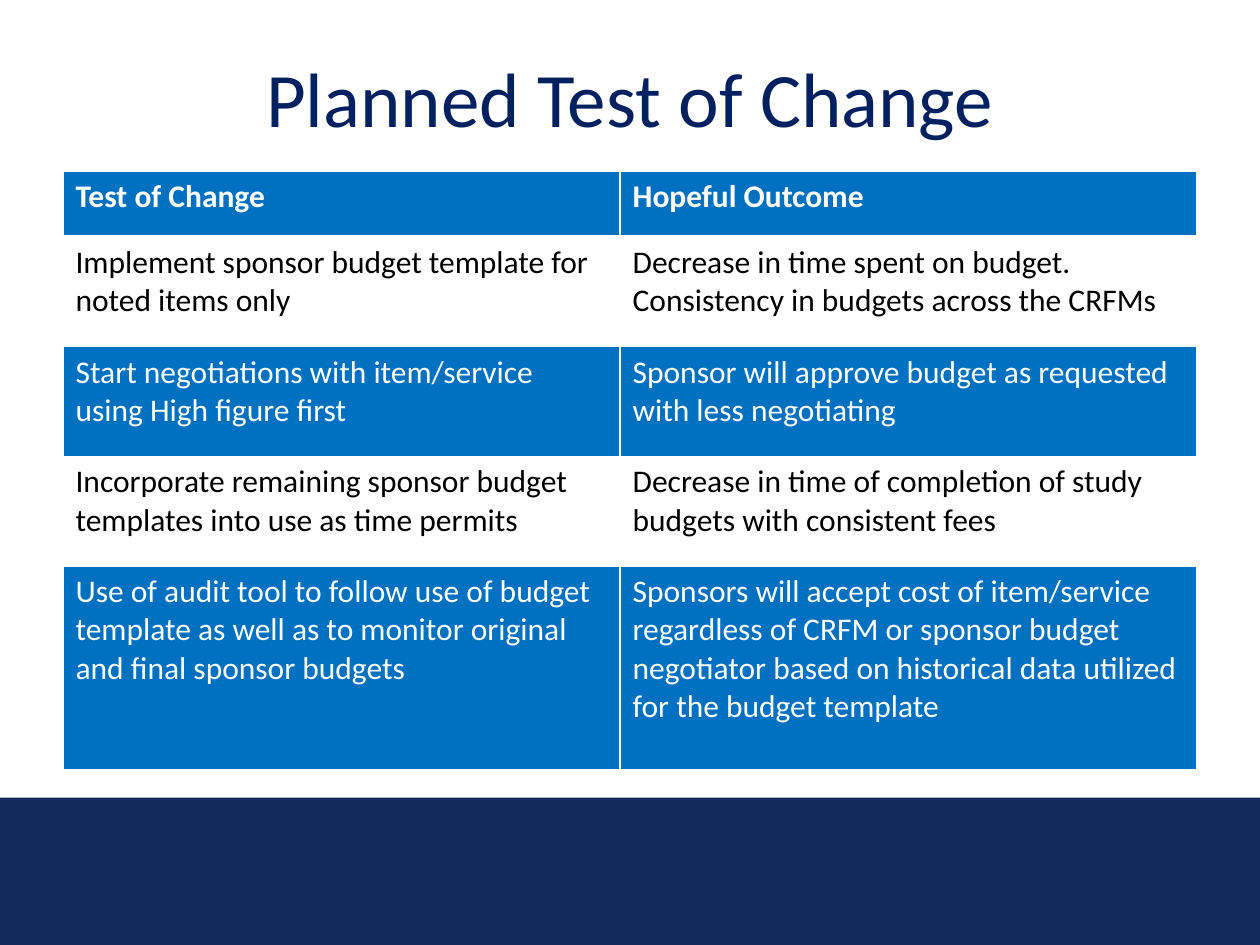
from lxml.etree import SubElement
from pptx import Presentation
from pptx.dml.color import RGBColor
from pptx.enum.shapes import MSO_SHAPE
from pptx.enum.text import MSO_ANCHOR, PP_ALIGN
from pptx.oxml.ns import qn
from pptx.util import Cm, Pt

COLORS = {
    "title": "002060",
    "band": "122A5D",
    "blue": "0070C0",
    "white": "FFFFFF",
    "black": "000000",
}
COLUMN_WIDTHS = [11.23, 11.63]
ROW_HEIGHTS = [1.32, 2.21, 2.21, 2.21, 4.11]
ROWS = [
    ("Test of Change", "Hopeful Outcome"),
    ("Implement sponsor budget template for noted items only",
     "Decrease in time spent on budget. Consistency in budgets across the CRFMs"),
    ("Start negotiations with item/service using High figure first",
     "Sponsor will approve budget as requested with less negotiating"),
    ("Incorporate remaining sponsor budget templates into use as time permits",
     "Decrease in time of completion of study budgets with consistent fees"),
    ("Use of audit tool to follow use of budget template as well as to monitor "
     "original and final sponsor budgets",
     "Sponsors will accept cost of item/service regardless of CRFM or sponsor "
     "budget negotiator based on historical data utilized for the budget template"),
]


class SlideBuilder:
    """Holds the shared style and the slide being filled."""

    font_name = "Calibri"

    def __init__(self, slide):
        self.slide = slide

    def color(self, name):
        return RGBColor.from_string(COLORS[name])

    def format_text(self, frame, size, color, bold=False):
        for para in frame.paragraphs:
            for span in para.runs:
                span.font.name = self.font_name
                span.font.size = Pt(size)
                span.font.bold = bold
                span.font.color.rgb = self.color(color)

    def band(self, left, top, width, height):
        shape = self.slide.shapes.add_shape(
            MSO_SHAPE.RECTANGLE, Cm(left), Cm(top), Cm(width), Cm(height))
        shape.shadow.inherit = False
        shape.fill.solid()
        shape.fill.fore_color.rgb = self.color("band")
        shape.line.fill.background()

    def title(self, text, left, top, width, height):
        title = self.slide.shapes.title
        title.left, title.top = Cm(left), Cm(top)
        title.width, title.height = Cm(width), Cm(height)
        frame = title.text_frame
        frame.text = text
        frame.vertical_anchor = MSO_ANCHOR.MIDDLE
        frame.paragraphs[0].alignment = PP_ALIGN.CENTER
        self.format_text(frame, 44, "title")

    def cell_borders(self, cell, bottom_width):
        properties = cell._tc.get_or_add_tcPr()
        widths = {"a:lnL": 1, "a:lnR": 1, "a:lnT": 1, "a:lnB": bottom_width}
        for index, (tag, width) in enumerate(widths.items()):
            line = SubElement(properties, qn(tag), w=str(Pt(width)))
            fill = SubElement(line, qn("a:solidFill"))
            SubElement(fill, qn("a:srgbClr"), val=COLORS["white"])
            properties.insert(index, line)

    def table(self, rows, left, top, column_widths, row_heights):
        """Add a table whose rows alternate between blue and white."""
        table = self.slide.shapes.add_table(
            len(rows), len(column_widths), Cm(left), Cm(top),
            Cm(sum(column_widths)), Cm(sum(row_heights))).table
        for column, width in zip(table.columns, column_widths):
            column.width = Cm(width)
        for index, (row, height, texts) in enumerate(
                zip(table.rows, row_heights, rows)):
            row.height = Cm(height)
            header = index == 0
            fill, ink = ("white", "black") if index % 2 else ("blue", "white")
            for cell, text in zip(row.cells, texts):
                cell.text_frame.text = text
                self.format_text(cell.text_frame, 18, ink, bold=header)
                cell.fill.solid()
                cell.fill.fore_color.rgb = self.color(fill)
                self.cell_borders(cell, bottom_width=3 if header else 1)


def main():
    deck = Presentation()
    deck.slide_width, deck.slide_height = Cm(25.4), Cm(19.05)
    builder = SlideBuilder(deck.slides.add_slide(deck.slide_layouts[5]))
    builder.band(0, 16.08, 25.4, 2.97)
    builder.title("Planned Test of Change", 1.27, 0.76, 22.86, 2.36)
    builder.table(ROWS, 1.27, 3.46, COLUMN_WIDTHS, ROW_HEIGHTS)
    deck.save("out.pptx")


if __name__ == "__main__":
    main()
